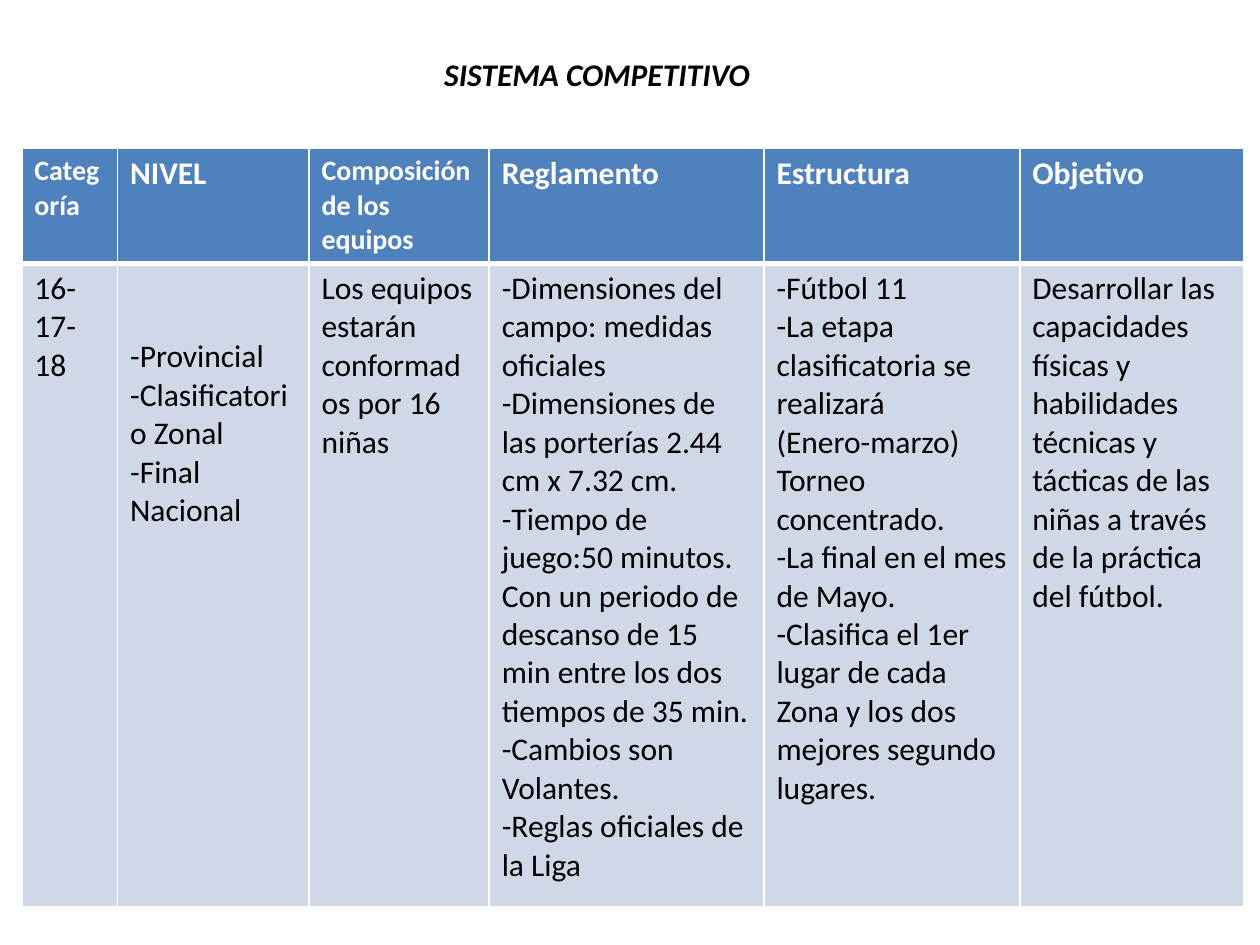
"""Build the slide with the competition system table."""
import pptx
import pptx.dml.color
import pptx.enum.text
import pptx.oxml
import pptx.oxml.ns
import pptx.util

Pt = pptx.util.Pt

TITLE = "SISTEMA COMPETITIVO "
FONT = "Calibri"
WHITE, BLACK, BLUE, PALE = "FFFFFF", "000000", "4F81BD", "D0D8E8"
LEFT, TOP = 12.5, 84.5
ROW_HEIGHTS = [65.5, 367.5]
MARGIN_TOP, NIVEL_MARGIN_TOP = 3.6, 42.6

COLUMNS = [
    ("Categoría", 16, 54.7, ["16-17-18"]),
    ("NIVEL", 18, 109.4, ["-Provincial", "-Clasificatorio Zonal", "-Final Nacional"]),
    ("Composición de los equipos", 16, 103,
     ["Los equipos estarán conformados por 16 niñas"]),
    ("Reglamento", 18, 157, [
        "-Dimensiones del campo: medidas oficiales",
        "-Dimensiones de las porterías 2.44 cm x 7.32 cm.",
        "-Tiempo de juego:50 minutos. Con un periodo de descanso de 15 min "
        "entre los dos tiempos de 35 min.",
        "-Cambios son Volantes.",
        "-Reglas oficiales de la Liga",
    ]),
    ("Estructura", 18, 146.2, [
        "-Fútbol 11",
        "-La etapa clasificatoria se realizará",
        "(Enero-marzo) Torneo concentrado.",
        "-La final en el mes de Mayo.",
        "-Clasifica el 1er lugar de cada Zona y los dos mejores segundo lugares.",
    ]),
    ("Objetivo", 18, 128.2, [
        "Desarrollar las capacidades físicas y habilidades técnicas y tácticas "
        "de las niñas a través de la práctica del fútbol.",
    ]),
]


def rgb(color):
    return pptx.dml.color.RGBColor.from_string(color)


def add_run(p, text, size, color, bold=False, italic=False):
    r = p.add_run()
    r.text = text
    r.font.name, r.font.size = FONT, Pt(size)
    r.font.bold, r.font.italic = bold, italic
    r.font.color.rgb = rgb(color)


def set_borders(cell, widths):
    tc_pr = cell._tc.get_or_add_tcPr()
    for i, (side, width) in enumerate(zip("LRTB", widths)):
        tc_pr.insert(i, pptx.oxml.parse_xml(
            f'<a:ln{side} {pptx.oxml.ns.nsdecls("a")} w="{Pt(width)}"><a:solidFill>'
            f'<a:srgbClr val="{WHITE}"/></a:solidFill></a:ln{side}>'))


def fill_cell(cell, lines, size, color, fill, bold, borders, margin_top=MARGIN_TOP):
    cell.fill.solid()
    cell.fill.fore_color.rgb = rgb(fill)
    set_borders(cell, borders)
    cell.margin_top = Pt(margin_top)
    tf = cell.text_frame
    for i, line in enumerate(lines):
        p = tf.add_paragraph() if i else tf.paragraphs[0]
        add_run(p, line, size, color, bold)


def add_title(s):
    sp = s.shapes.title
    sp.left, sp.top, sp.width, sp.height = Pt(39.5), Pt(28), Pt(607.5), Pt(29)
    tf = sp.text_frame
    tf.word_wrap = True
    tf.auto_size = pptx.enum.text.MSO_AUTO_SIZE.NONE
    tf.vertical_anchor = pptx.enum.text.MSO_ANCHOR.TOP
    p = tf.paragraphs[0]
    p.alignment = pptx.enum.text.PP_ALIGN.CENTER
    add_run(p, TITLE, 18, BLACK, bold=True, italic=True)


def add_system_table(s):
    width = sum(column[2] for column in COLUMNS)
    table = s.shapes.add_table(len(ROW_HEIGHTS), len(COLUMNS), Pt(LEFT), Pt(TOP),
                               Pt(width), Pt(sum(ROW_HEIGHTS))).table
    for row, height in zip(table.rows, ROW_HEIGHTS):
        row.height = Pt(height)
    for i, (heading, size, col_width, lines) in enumerate(COLUMNS):
        table.columns[i].width = Pt(col_width)
        margin_top = NIVEL_MARGIN_TOP if heading == "NIVEL" else MARGIN_TOP
        fill_cell(table.cell(0, i), [heading], size, WHITE, BLUE, True, (1, 1, 1, 3))
        fill_cell(table.cell(1, i), lines, 18, BLACK, PALE, False, (1, 1, 3, 1), margin_top)


def main():
    prs = pptx.Presentation()
    prs.slide_width, prs.slide_height = Pt(720), Pt(540)
    s = prs.slides.add_slide(prs.slide_layouts[5])
    add_system_table(s)
    add_title(s)
    prs.save("out.pptx")


if __name__ == "__main__":
    main()
